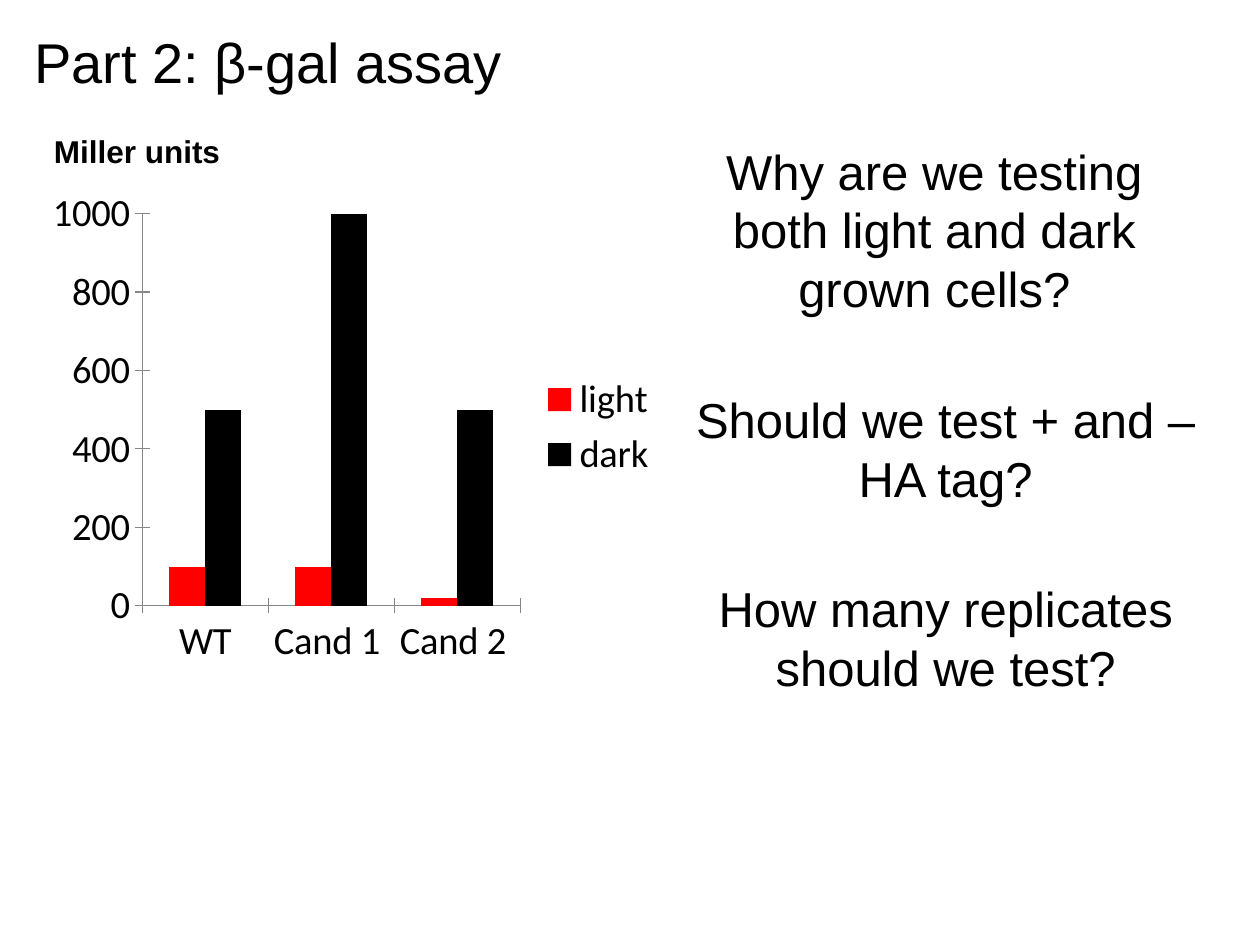
"""Build the β-gal assay slide: a clustered column chart beside three questions."""
from lxml import etree
from pptx import Presentation
from pptx.chart.data import CategoryChartData
from pptx.dml.color import RGBColor
from pptx.enum.chart import XL_CHART_TYPE, XL_LEGEND_POSITION, XL_TICK_MARK
from pptx.enum.text import MSO_ANCHOR, MSO_AUTO_SIZE, PP_ALIGN
from pptx.util import Inches, Pt

COLUMNS = XL_CHART_TYPE.COLUMN_CLUSTERED
LEGEND_RIGHT = XL_LEGEND_POSITION.RIGHT
TICK_CROSS = XL_TICK_MARK.CROSS
LEFT, CENTER = PP_ALIGN.LEFT, PP_ALIGN.CENTER
TOP = MSO_ANCHOR.TOP
NO_AUTOFIT = MSO_AUTO_SIZE.NONE

THEME = {
    "font": "Arial", "chart_font": "Calibri",
    "text": "000000", "axis": "868686", "light": "FF0000", "dark": "000000",
    "title": 32, "question": 28, "unit": 18, "chart": 22,
}

TITLE = "Part 2: β-gal assay"
TITLE_BOX = (0.17, 0.17, 5.25, 0.64)
UNIT = "Miller units"
UNIT_BOX = (0.33, 1, 1.67, 0.4)
QUESTIONS = [
    ("Why are we testing both light and dark grown cells?", (5.33, 1.07, 4.17, 1.51)),
    ("Should we test + and – HA tag?", (5.42, 3.04, 4.17, 1.04)),
    ("How many replicates should we test?", (5.42, 4.54, 4.17, 1.04)),
]
CHART_BOX = (0.33, 1.42, 5, 3.94)
PLOT_LAYOUT = {"x": 0.16, "y": 0.07, "w": 0.6, "h": 0.79}
CATEGORIES = ["WT", "Cand 1 ", "Cand 2 "]
SERIES = {"light": (100, 100, 20), "dark": (500, 1000, 500)}


def color(name):
    return RGBColor.from_string(THEME[name])


def place(box):
    return [Inches(length) for length in box]


def style_font(font, size, face="font"):
    font.name = THEME[face]
    font.size = Pt(THEME[size])
    font.color.rgb = color("text")


def write_text(shape, text, size, align=LEFT, bold=False):
    frame = shape.text_frame
    frame.word_wrap = True
    frame.auto_size = NO_AUTOFIT
    frame.vertical_anchor = TOP
    paragraph = frame.paragraphs[0]
    paragraph.alignment = align
    run = paragraph.add_run()
    run.text = text
    style_font(run.font, size)
    run.font.bold = bold


def add_text(slide, text, box, size, align=LEFT, bold=False):
    write_text(slide.shapes.add_textbox(*place(box)), text, size, align, bold)


def set_plot_layout(chart):
    plot_area = chart.plots[0]._element.getparent()
    namespace = "{http://schemas.openxmlformats.org/drawingml/2006/chart}"
    for layout in plot_area.findall(namespace + "layout"):
        plot_area.remove(layout)
    layout = etree.Element(namespace + "layout")
    manual = etree.SubElement(layout, namespace + "manualLayout")
    settings = {"layoutTarget": "inner", "xMode": "edge", "yMode": "edge", **PLOT_LAYOUT}
    for tag, value in settings.items():
        etree.SubElement(manual, namespace + tag, val=str(value))
    plot_area.insert(0, layout)


def add_assay_chart(slide):
    data = CategoryChartData()
    data.categories = CATEGORIES
    for name, values in SERIES.items():
        data.add_series(name, values)
    chart = slide.shapes.add_chart(COLUMNS, *place(CHART_BOX), data).chart
    style_font(chart.font, "chart", "chart_font")
    chart.has_title = False
    chart.has_legend = True
    chart.legend.position = LEGEND_RIGHT
    chart.legend.include_in_layout = False
    style_font(chart.legend.font, "chart", "chart_font")
    for axis in (chart.category_axis, chart.value_axis):
        axis.has_major_gridlines = False
        axis.major_tick_mark = TICK_CROSS
        axis.format.line.color.rgb = color("axis")
        axis.format.line.width = Pt(0.75)
        style_font(axis.tick_labels.font, "chart", "chart_font")
    chart.value_axis.minimum_scale = 0
    chart.value_axis.maximum_scale = 1000
    chart.value_axis.major_unit = 200
    plot = chart.plots[0]
    plot.gap_width = 150
    plot.overlap = 0
    plot.vary_by_categories = False
    for series in plot.series:
        series.format.fill.solid()
        series.format.fill.fore_color.rgb = color(series.name)
    set_plot_layout(chart)


def main():
    presentation = Presentation()
    presentation.slide_width, presentation.slide_height = Inches(10), Inches(7.5)
    slide = presentation.slides.add_slide(presentation.slide_layouts.get_by_name("Title Only"))
    title = slide.shapes.title
    title.left, title.top, title.width, title.height = place(TITLE_BOX)
    write_text(title, TITLE, "title")
    add_assay_chart(slide)
    add_text(slide, UNIT, UNIT_BOX, "unit", bold=True)
    for question, box in QUESTIONS:
        add_text(slide, question, box, "question", CENTER)
    presentation.save("out.pptx")


if __name__ == "__main__":
    main()
